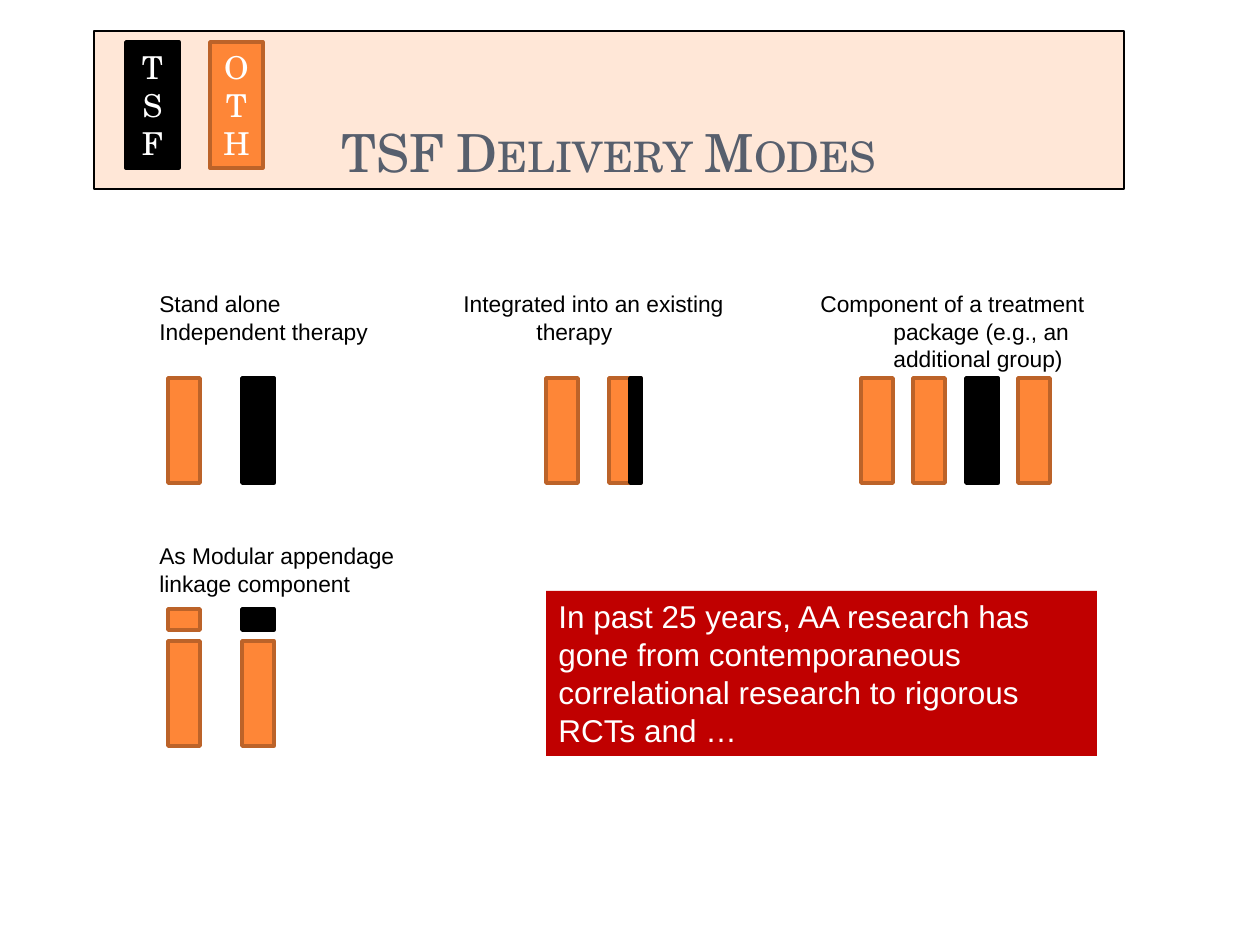
import pptx
import pptx.util
from pptx.dml.color import RGBColor
from pptx.enum.shapes import MSO_SHAPE
from pptx.enum.text import MSO_ANCHOR, PP_ALIGN

PX = 914400 / 126
BLACK = RGBColor(0x00, 0x00, 0x00)
WHITE = RGBColor(0xFF, 0xFF, 0xFF)
ORANGE = RGBColor(0xFE, 0x86, 0x37)
BROWN = RGBColor(0xBC, 0x63, 0x29)
PEACH = RGBColor(0xFF, 0xE7, 0xD7)
SLATE = RGBColor(0x57, 0x5F, 0x6D)
RED = RGBColor(0xC0, 0x00, 0x00)
SERIF = "TeX Gyre Schola"
SANS = "Arial"

deck = pptx.Presentation()
deck.slide_width = round(1260 * PX)
deck.slide_height = round(945 * PX)
slide = deck.slides.add_slide(deck.slide_layouts[6])


def add_box(home, place, fill, edge=None, width=2):
    box = home.shapes.add_shape(MSO_SHAPE.RECTANGLE, *[round(n * PX) for n in place])
    box.shadow.inherit = False
    box.fill.solid()
    box.fill.fore_color.rgb = fill
    if edge is None:
        box.line.fill.background()
    else:
        box.line.color.rgb = edge
        box.line.width = pptx.util.Pt(width)
    return box


def add_text(shape, lines, size, face, color, align=PP_ALIGN.LEFT, anchor=MSO_ANCHOR.TOP, hang=False):
    """Write one paragraph per line; hang gives each a hanging indent."""
    frame = shape.text_frame
    frame.word_wrap = True
    frame.vertical_anchor = anchor
    for i, line in enumerate(lines):
        para = frame.paragraphs[0] if i == 0 else frame.add_paragraph()
        para.alignment = align
        if hang:
            props = para._p.get_or_add_pPr()
            props.set("marL", str(round(136 * PX)))
            props.set("indent", str(round(-73 * PX)))
        run = para.add_run()
        run.text = line
        run.font.size = pptx.util.Pt(size)
        run.font.name = face
        run.font.color.rgb = color


# Title band
title = add_box(slide, (94, 31, 1030, 158), PEACH, BLACK, 0.75)
add_text(title, ["TSF Delivery Modes"], 30, SERIF, SLATE, PP_ALIGN.CENTER, MSO_ANCHOR.BOTTOM)
title.text_frame.paragraphs[0].runs[0].font._element.set("cap", "small")

# Captions of the four modes: place, lines, hanging indent
notes = [
    ((84, 284, 336, 68), ["Stand alone", "Independent therapy"], True),
    ((388, 284, 357, 68), ["Integrated into an existing therapy"], True),
    ((745, 284, 399, 96), ["Component of a treatment package (e.g., an additional group)"], True),
    ((147, 536, 273, 68), ["As Modular appendage linkage component"], False),
]
for place, lines, hang in notes:
    note = slide.shapes.add_textbox(*[round(n * PX) for n in place])
    add_text(note, lines, 13, SANS, BLACK, hang=hang)

# Bars of each mode: left, top, width, height, fill
TALL, SHORT, WIDE, THIN = 105, 21, 32, 11
modes = [
    [(168, 378, WIDE, TALL, ORANGE), (242, 378, WIDE, TALL, BLACK)],
    [(546, 378, WIDE, TALL, ORANGE), (609, 378, WIDE, TALL, ORANGE), (630, 378, THIN, TALL, BLACK)],
    [(861, 378, WIDE, TALL, ORANGE), (913, 378, WIDE, TALL, ORANGE),
     (966, 378, WIDE, TALL, BLACK), (1018, 378, WIDE, TALL, ORANGE)],
    [(168, 609, WIDE, SHORT, ORANGE), (242, 609, WIDE, SHORT, BLACK),
     (168, 641, WIDE, TALL, ORANGE), (242, 641, WIDE, TALL, ORANGE)],
]
for bars in modes:
    group = slide.shapes.add_group_shape()
    for *place, fill in bars:
        add_box(group, place, fill, BROWN if fill == ORANGE else BLACK)

# Colour key
key = slide.shapes.add_group_shape()
for left, name, fill, edge in [(126, "TSF", BLACK, BLACK), (210, "OTH", ORANGE, BROWN)]:
    tile = add_box(key, (left, 42, 53, 126), fill, edge)
    add_text(tile, [name], 18, SERIF, WHITE, PP_ALIGN.CENTER, MSO_ANCHOR.MIDDLE)

# Closing remark
remark = add_box(slide, (546, 591, 551, 165), RED)
add_text(remark, ["In past 25 years, AA research has gone from contemporaneous "
                  "correlational research to rigorous RCTs and …"], 18, SANS, WHITE)

deck.save("out.pptx")
